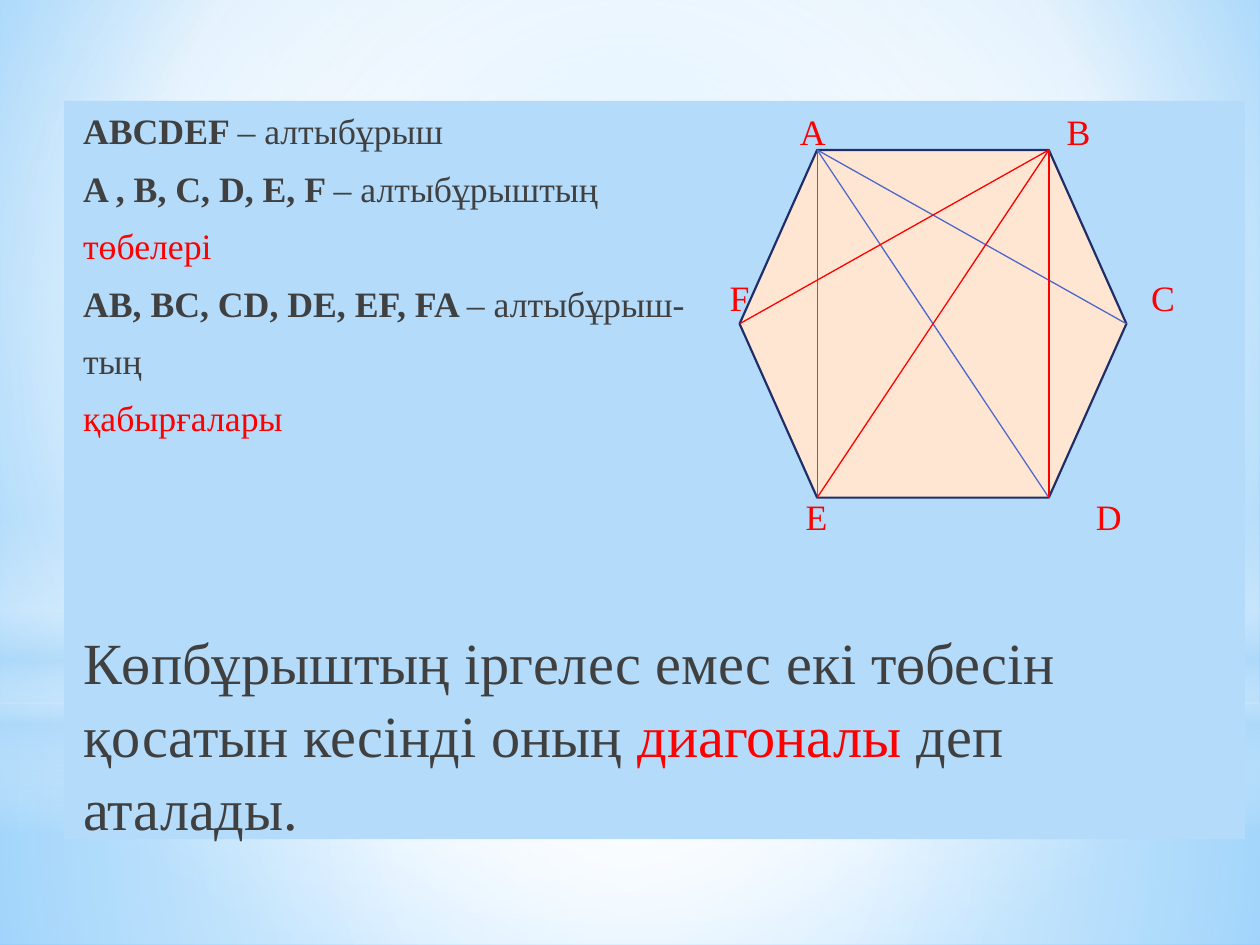
from lxml.etree import SubElement
from pptx import Presentation
from pptx.dml.color import RGBColor
from pptx.enum.shapes import MSO_CONNECTOR, MSO_SHAPE
from pptx.enum.text import MSO_ANCHOR, MSO_AUTO_SIZE, PP_ALIGN
from pptx.oxml.ns import qn
from pptx.util import Inches, Pt

FONT = "Times New Roman"
GRAY = RGBColor(0x40, 0x40, 0x40)
RED = RGBColor(0xFF, 0x00, 0x00)
BLUE = RGBColor(0x4E, 0x67, 0xC8)
NAVY = RGBColor(0x1F, 0x2E, 0x69)
PEACH = RGBColor(0xFF, 0xE6, 0xD3)
SKY = RGBColor(0xB4, 0xDC, 0xFA)
WHITE = RGBColor(0xFF, 0xFF, 0xFF)
PALE = RGBColor(0x9E, 0xD5, 0xFF)
DEEP = RGBColor(0x5B, 0xB9, 0xFF)

BACKDROP = [(0, PALE, 100), (60, WHITE, 100), (100, DEEP, 100)]
CENTER = (50, 50, 50, 50)
GLOWS = [
    (MSO_SHAPE.RECTANGLE, (0, 5.58, 10, 1.92),
     [(0, WHITE, 91), (37, WHITE, 76), (100, SKY, 79)], CENTER),
    (MSO_SHAPE.RECTANGLE, (0, 0, 10, 5.58),
     [(0, WHITE, 89), (48, WHITE, 62), (100, SKY, 79)], CENTER),
    (MSO_SHAPE.RECTANGLE, (0, 4.12, 10, 2.5),
     [(0, WHITE, 0), (29, WHITE, 30), (45, SKY, 40), (55, WHITE, 26),
      (65, SKY, 60), (100, WHITE, 0)], None),
    (MSO_SHAPE.OVAL, (0, 1.75, 10, 5.58),
     [(0, WHITE, 100), (56, WHITE, 0)], CENTER),
]

TEXT_SIZE, RULE_SIZE = 20.4, 33.3
GAP_BEFORE, RULE_GAP = 4.1, 101.7
PARAGRAPHS = [
    [("ABCDEF ", GRAY, True), ("– алтыбұрыш", GRAY, False)],
    [("A , B, C, D, E, F ", GRAY, True), ("– алтыбұрыштың", GRAY, False)],
    [("төбелері", RED, False)],
    [("AB, BC, CD, DE, EF, FA ", GRAY, True), ("– алтыбұрыш-", GRAY, False)],
    [("тың", GRAY, False)],
    [("қабырғалары", RED, False)],
    [("Көпбұрыштың іргелес емес екі төбесін қосатын кесінді оның ", GRAY, False),
     ("диагоналы", RED, False), (" деп аталады.", GRAY, False)],
]

LABELS = {"A": (6.45, 1.04), "B": (8.56, 1.04), "C": (9.23, 2.36),
          "D": (8.8, 4.1), "E": (6.48, 4.1), "F": (5.87, 2.36)}
LABEL_SIDE = 0.4
LEFT, TOP, WIDTH, HEIGHT = 5.87, 1.19, 3.07, 2.76
SLANT = 0.223
INSET = SLANT * HEIGHT
RIGHT, BOTTOM, MIDDLE = LEFT + WIDTH, TOP + HEIGHT, TOP + HEIGHT / 2
VERTICES = {"A": (LEFT + INSET, TOP), "B": (RIGHT - INSET, TOP),
            "C": (RIGHT, MIDDLE), "D": (RIGHT - INSET, BOTTOM),
            "E": (LEFT + INSET, BOTTOM), "F": (LEFT, MIDDLE)}
DIAGONALS = [("AD", BLUE), ("AC", BLUE), ("AE", BLUE),
             ("BE", RED), ("BD", RED), ("BF", RED)]


def set_gradient(owner, fill, stops, focus):
    fill.solid()
    solid = owner.xpath(".//a:solidFill")[0]
    gradient = solid.makeelement(qn("a:gradFill"), {"rotWithShape": "1"})
    solid.getparent().replace(solid, gradient)
    stop_list = SubElement(gradient, qn("a:gsLst"))
    for position, color, opacity in stops:
        stop = SubElement(stop_list, qn("a:gs"), pos=str(position * 1000))
        shade = SubElement(stop, qn("a:srgbClr"), val=str(color))
        if opacity < 100:
            SubElement(shade, qn("a:alpha"), val=str(opacity * 1000))
    if focus:
        shape_path = SubElement(gradient, qn("a:path"), {"path": "circle"})
        edges = {side: str(value * 1000) for side, value in zip("ltrb", focus)}
        SubElement(shape_path, qn("a:fillToRect"), edges)
    else:
        SubElement(gradient, qn("a:lin"), ang=str(90 * 60000), scaled="0")


def style_font(font, size, color, bold=False):
    font.name, font.size, font.bold = FONT, Pt(size), bold
    font.color.rgb = color


def fill_body(body):
    body.left, body.top, body.width, body.height = map(Inches, (0.51, 0.8, 9.37, 5.86))
    body.fill.solid()
    body.fill.fore_color.rgb = SKY
    frame = body.text_frame
    frame.auto_size, frame.word_wrap = MSO_AUTO_SIZE.NONE, True
    frame.vertical_anchor = MSO_ANCHOR.TOP
    frame.margin_right = Inches(0.2)
    for index, spans in enumerate(PARAGRAPHS):
        is_rule = index == len(PARAGRAPHS) - 1
        para = frame.add_paragraph() if index else frame.paragraphs[0]
        properties = para._p.get_or_add_pPr()
        properties.set("marL", str(Inches(0.05)))
        properties.set("indent", "0")
        SubElement(properties, qn("a:buNone"))
        para.line_spacing = 1.05
        para.space_before = Pt(RULE_GAP if is_rule else GAP_BEFORE if index else 0)
        para.space_after = Pt(3)
        for text, color, bold in spans:
            span = para.add_run()
            span.text = text
            style_font(span.font, RULE_SIZE if is_rule else TEXT_SIZE, color, bold)


def add_label(page, letter, center):
    x, y = (Inches(value - LABEL_SIDE / 2) for value in center)
    box = page.shapes.add_textbox(x, y, Inches(LABEL_SIDE), Inches(LABEL_SIDE))
    frame = box.text_frame
    frame.word_wrap = True
    frame.margin_left = frame.margin_right = frame.margin_top = frame.margin_bottom = 0
    frame.vertical_anchor = MSO_ANCHOR.MIDDLE
    frame.text = letter
    para = frame.paragraphs[0]
    para.alignment = PP_ALIGN.CENTER
    style_font(para.runs[0].font, TEXT_SIZE, RED)


def add_diagonal(page, ends, color):
    start, end = (VERTICES[letter] for letter in ends)
    line = page.shapes.add_connector(MSO_CONNECTOR.STRAIGHT, *map(Inches, start + end))
    line.line.color.rgb = color
    line.line.width = Pt(0.75)
    SubElement(line.element.spPr, qn("a:effectLst"))


def main():
    deck = Presentation()
    deck.slide_width, deck.slide_height = Inches(10), Inches(7.5)
    page = deck.slides.add_slide(deck.slide_layouts[1])
    title, body = page.placeholders
    title.element.getparent().remove(title.element)
    set_gradient(page.element, page.background.fill, BACKDROP, (20, 10, 20, 60))

    for kind, place, stops, focus in GLOWS:
        glow = page.shapes.add_shape(kind, *map(Inches, place))
        glow.shadow.inherit = False
        glow.line.fill.background()
        set_gradient(glow.element, glow.fill, stops, focus)

    body.element.getparent().append(body.element)
    fill_body(body)
    for letter, center in LABELS.items():
        add_label(page, letter, center)

    hexagon = page.shapes.add_shape(
        MSO_SHAPE.HEXAGON, *map(Inches, (LEFT, TOP, WIDTH, HEIGHT)))
    hexagon.adjustments[0] = SLANT
    hexagon.shadow.inherit = False
    hexagon.fill.solid()
    hexagon.fill.fore_color.rgb = PEACH
    hexagon.line.color.rgb = NAVY
    hexagon.line.width = Pt(1.25)
    for ends, color in DIAGONALS:
        add_diagonal(page, ends, color)

    deck.save("out.pptx")


if __name__ == "__main__":
    main()
